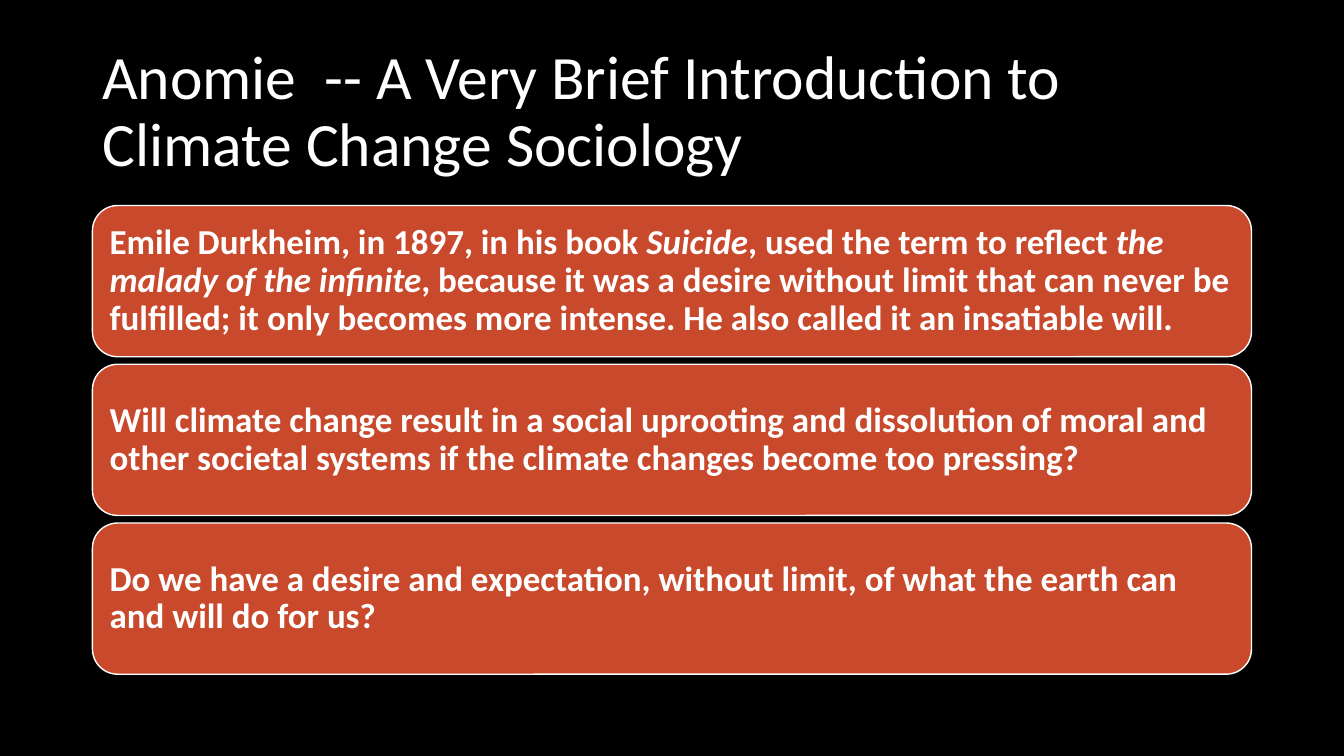
import pptx
import pptx.util
import pptx.dml.color
import pptx.enum.shapes
import pptx.enum.text
from pptx.util import Cm, Pt

BLACK = pptx.dml.color.RGBColor(0x00, 0x00, 0x00)
WHITE = pptx.dml.color.RGBColor(0xFF, 0xFF, 0xFF)
RUST = pptx.dml.color.RGBColor(0xC9, 0x49, 0x2C)

LEFT, WIDTH = Cm(2.33), Cm(29.21)
FIRST_TOP, CARD_HEIGHT, CARD_PITCH = 5.18, 3.81, 4.0

# Each card is a list of (text, italic) pieces
CARDS = [
    [("Emile Durkheim, in 1897, in his book ", False),
     ("Suicide", True),
     (", used the term to reflect ", False),
     ("the malady of the infinite", True),
     (", because it was a desire without limit that can never be fulfilled; "
      "it only becomes more intense. He also called it an insatiable will.", False)],
    [("Will climate change result in a social uprooting and dissolution of moral and "
      "other societal systems if the climate changes become too pressing?", False)],
    [("Do we have a desire and expectation, without limit, of what the earth can "
      "and will do for us?", False)],
]


def style_paragraph(paragraph, size, bold):
    paragraph.alignment = pptx.enum.text.PP_ALIGN.LEFT
    paragraph.line_spacing = 0.9
    paragraph.font.name = "Calibri"
    paragraph.font.size = Pt(size)
    paragraph.font.bold = bold
    paragraph.font.color.rgb = WHITE


# Slide with black background
deck = pptx.Presentation()
deck.slide_width, deck.slide_height = Cm(33.87), Cm(19.05)
slide = deck.slides.add_slide(deck.slide_layouts[6])
slide.background.fill.solid()
slide.background.fill.fore_color.rgb = BLACK

# Title
title = slide.shapes.add_textbox(LEFT, Cm(1.01), WIDTH, Cm(3.68)).text_frame
title.word_wrap = True
title.vertical_anchor = pptx.enum.text.MSO_ANCHOR.MIDDLE
title.text = "Anomie  -- A Very Brief Introduction to Climate Change Sociology"
style_paragraph(title.paragraphs[0], 44, False)

# Stacked cards
for row, pieces in enumerate(CARDS):
    card = slide.shapes.add_shape(
        pptx.enum.shapes.MSO_SHAPE.ROUNDED_RECTANGLE,
        LEFT, Cm(FIRST_TOP + row * CARD_PITCH), WIDTH, Cm(CARD_HEIGHT))
    card.shadow.inherit = False
    card.fill.solid()
    card.fill.fore_color.rgb = RUST
    card.line.color.rgb = WHITE
    card.line.width = Pt(1)

    statement = card.text_frame
    statement.word_wrap = True
    statement.vertical_anchor = pptx.enum.text.MSO_ANCHOR.MIDDLE
    statement.margin_left = statement.margin_right = Cm(0.25)
    style_paragraph(statement.paragraphs[0], 25, True)
    for text, italic in pieces:
        run = statement.paragraphs[0].add_run()
        run.text = text
        if italic:
            run.font.italic = True

deck.save("out.pptx")
